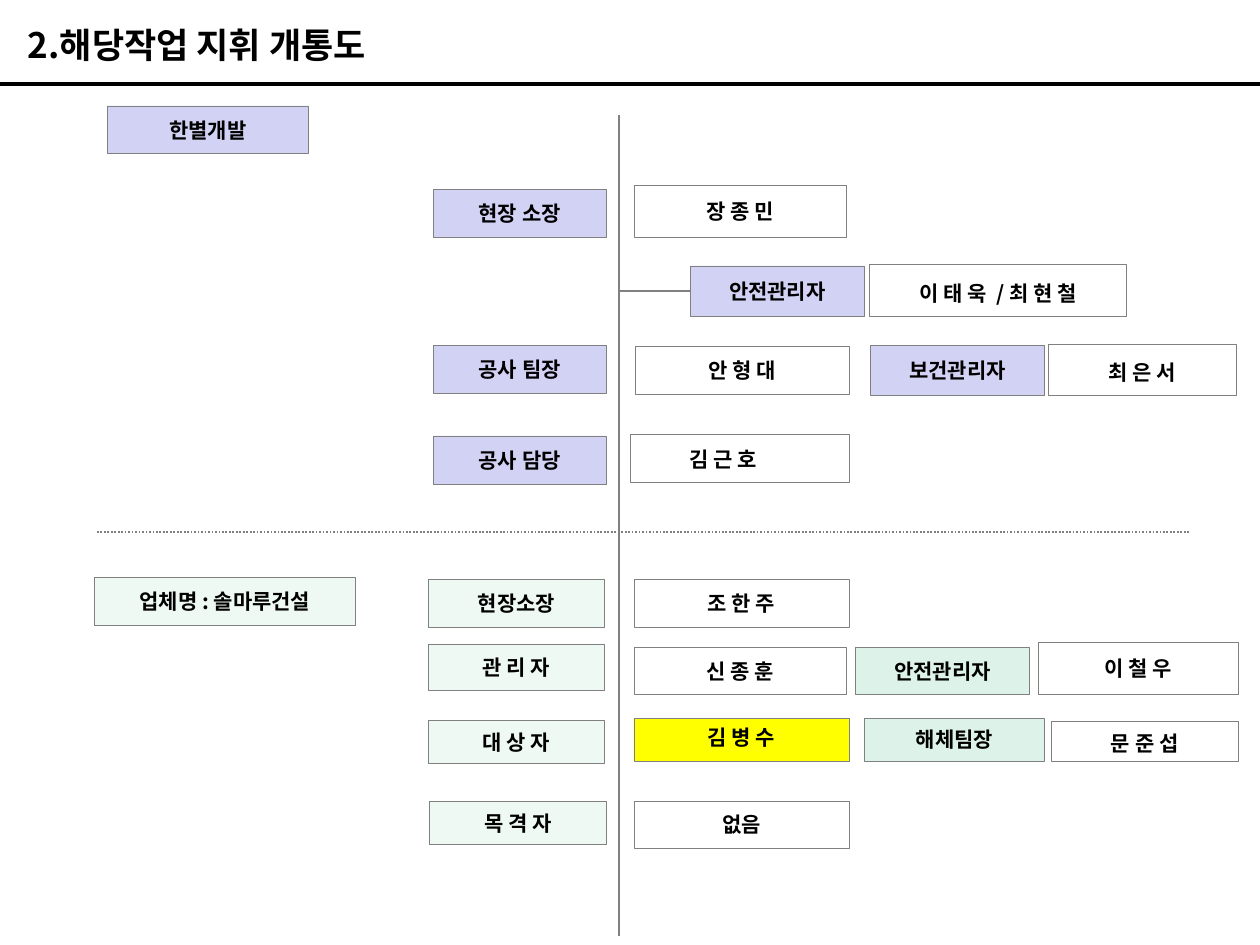
from pptx import Presentation
from pptx.dml.color import RGBColor
from pptx.enum.dml import MSO_LINE
from pptx.enum.shapes import MSO_CONNECTOR, MSO_SHAPE
from pptx.enum.text import MSO_ANCHOR, MSO_AUTO_SIZE, PP_ALIGN
from pptx.oxml.ns import qn
from pptx.util import Pt
from lxml.etree import SubElement

PX = 9144  # 100 px to the inch
FONT = "Noto Sans CJK KR"
BLACK, GREY, WHITE = "000000", "808080", "FFFFFF"
LILAC, MINT, GREEN, YELLOW = "D2D2F4", "EEF9F4", "DDF3EA", "FFFF00"


def color(value):
    return RGBColor.from_string(value)


def style_text(frame, size, align, anchor):
    """Format the single paragraph of a text frame, for Latin and Korean glyphs."""
    frame.vertical_anchor = anchor
    para = frame.paragraphs[0]
    para.alignment = align
    for span in para.runs:
        span.font.size = Pt(size)
        span.font.bold = True
        span.font.name = FONT
        span.font.color.rgb = color(BLACK)
        SubElement(span.font._element, qn("a:ea")).set("typeface", FONT)


deck = Presentation()
deck.slide_width, deck.slide_height = 1000 * PX, 750 * PX
page = deck.slides.add_slide(deck.slide_layouts[5])

title = page.shapes.title
title.left, title.top, title.width, title.height = 12 * PX, 14 * PX, 380 * PX, 44 * PX
title.text_frame.text = "2.해당작업 지휘 개통도"
title.text_frame.auto_size = MSO_AUTO_SIZE.NONE
style_text(title.text_frame, 20, PP_ALIGN.LEFT, MSO_ANCHOR.TOP)

# Text, left, top, width, height, fill, line spacing
boxes = [
    # Main contractor
    ("한별개발", 85, 84, 160, 38, LILAC, 1),
    ("현장 소장", 344, 150, 137, 38, LILAC, 1),
    ("장 종 민", 503, 147, 169, 41, WHITE, 1),
    ("안전관리자", 548, 211, 138, 40, LILAC, 1),
    ("이 태 욱  / 최 현 철", 690, 210, 204, 41, WHITE, 1.2),
    ("공사 팀장", 344, 274, 137, 38, LILAC, 1),
    ("안 형 대", 504, 275, 170, 38, WHITE, 1),
    ("보건관리자", 691, 274, 138, 40, LILAC, 1),
    ("최 은 서", 832, 273, 149, 41, WHITE, 1.2),
    ("공사 담당", 344, 346, 137, 38, LILAC, 1),
    ("김 근 호", 500, 345, 174, 38, WHITE, 1),
    # Subcontractor
    ("업체명 : 솔마루건설", 75, 458, 207, 38, MINT, 1),
    ("현장소장", 340, 460, 140, 38, MINT, 1),
    ("조 한 주", 503, 460, 171, 38, WHITE, 1),
    ("관 리 자", 340, 511, 140, 37, MINT, 1),
    ("신 종 훈", 503, 514, 169, 37, WHITE, 1),
    ("안전관리자", 679, 514, 138, 37, GREEN, 1),
    ("이 철 우", 824, 510, 159, 41, WHITE, 1),
    ("대 상 자", 340, 572, 140, 34, MINT, 1),
    ("김 병 수", 503, 570, 171, 34, YELLOW, 0.8),
    ("해체팀장", 686, 570, 143, 34, GREEN, 1),
    ("문 준 섭", 834, 572, 149, 32, WHITE, 1.2),
    ("목 격 자", 341, 636, 140, 34, MINT, 1),
    ("없음", 503, 636, 171, 37, WHITE, 1),
]
box_at = {}
for text, left, top, width, height, fill, spacing in boxes:
    box = page.shapes.add_shape(
        MSO_SHAPE.RECTANGLE, left * PX, top * PX, width * PX, height * PX)
    box.shadow.inherit = False
    box.fill.solid()
    box.fill.fore_color.rgb = color(fill)
    box.line.color.rgb = color(GREY)
    box.line.width = Pt(0.25)
    box.text_frame.text = text
    box.text_frame.paragraphs[0].line_spacing = spacing
    style_text(box.text_frame, 12, PP_ALIGN.CENTER, MSO_ANCHOR.MIDDLE)
    box_at[left, top] = box

# The site engineer's name sits left of centre
engineer = box_at[500, 345].text_frame
engineer.paragraphs[0].alignment = PP_ALIGN.LEFT
engineer.margin_left = 47 * PX

# Start x, start y, end x, end y, colour, width, dash
lines = [
    (0, 67, 1000, 67, BLACK, 2.25, None),
    (77, 422, 944, 422, GREY, 1, MSO_LINE.ROUND_DOT),
    (491, 91, 491, 743, GREY, 1, None),
    (548, 231, 491, 231, GREY, 0.75, None),
]
for x1, y1, x2, y2, stroke, weight, dash in lines:
    line = page.shapes.add_connector(
        MSO_CONNECTOR.STRAIGHT, x1 * PX, y1 * PX, x2 * PX, y2 * PX)
    line.line.color.rgb = color(stroke)
    line.line.width = Pt(weight)
    if dash:
        line.line.dash_style = dash
    SubElement(line._element.spPr, qn("a:effectLst"))
    if (x1, y1) == (548, 231):
        line.begin_connect(box_at[548, 211], 1)

deck.save("out.pptx")
